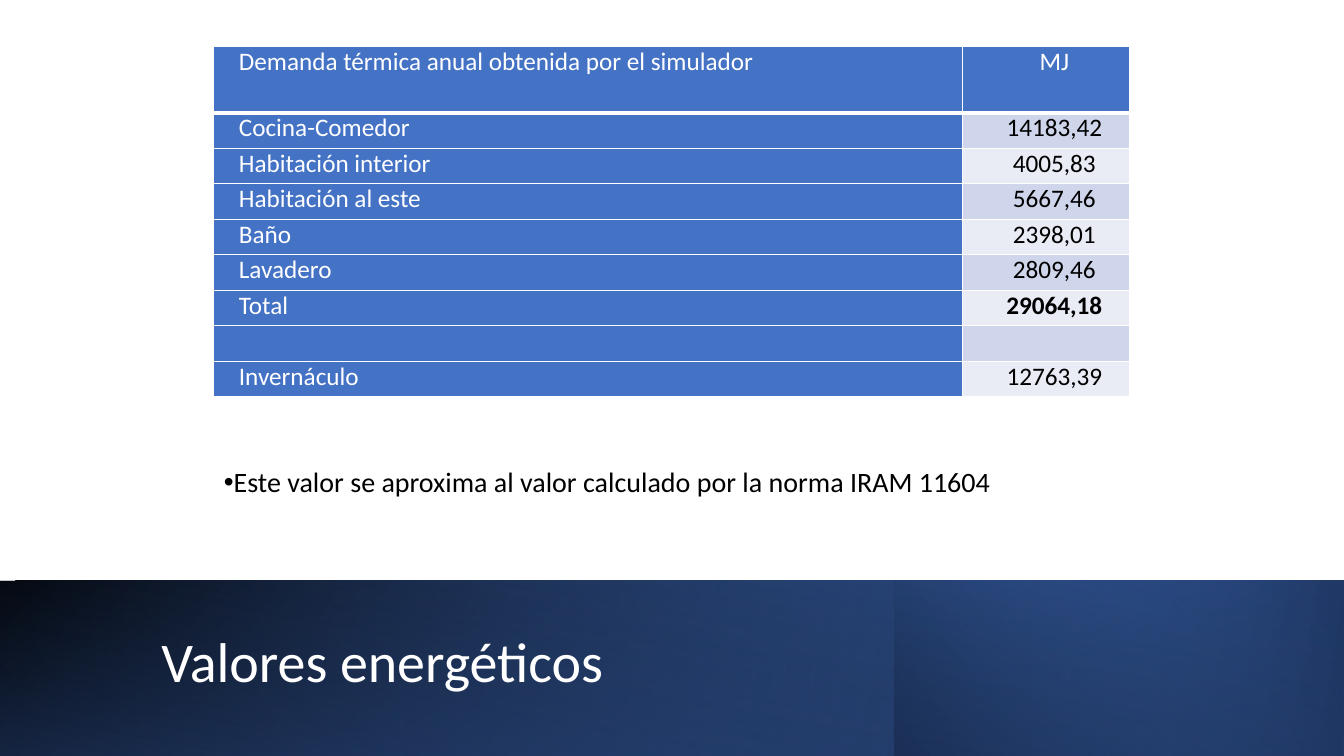
from lxml.etree import SubElement
from pptx import Presentation
from pptx.dml.color import RGBColor
from pptx.enum.shapes import MSO_SHAPE as Shape
from pptx.enum.text import MSO_ANCHOR as Anchor, MSO_AUTO_SIZE as AutoSize, PP_ALIGN as Align
from pptx.oxml.ns import qn
from pptx.util import Pt

TITLE = "Valores energéticos"
NOTE = "Este valor se aproxima al valor calculado por la norma IRAM 11604"
DEMAND = [
    ("Demanda térmica anual obtenida por el simulador", "MJ"),
    ("Cocina-Comedor", "14183,42"),
    ("Habitación interior", "4005,83"),
    ("Habitación al este", "5667,46"),
    ("Baño", "2398,01"),
    ("Lavadero", "2809,46"),
    ("Total", "29064,18"),
    ("", ""),
    ("Invernáculo", "12763,39"),
]
COLORS = {
    "white": "FFFFFF", "black": "000000", "blue": "4472C4",
    "navy": "203864", "band_dark": "CFD5EA", "band_light": "E9EBF5",
}
FONT = "Calibri"
SLIDE_WIDTH, SLIDE_HEIGHT = 960, 540
BAND_TOP, BAND_HEIGHT = 414.72, 125.28
BANDS = [
    ((0, BAND_TOP, SLIDE_WIDTH, BAND_HEIGHT), 0, 140, [(0, "black", 100), (1, "blue", 100)]),
    ((0, BAND_TOP, SLIDE_WIDTH, BAND_HEIGHT), 0, 170, [(0, "blue", 0), (1, "navy", 100)]),
    ((638.64, BAND_TOP, 321.36, BAND_HEIGHT), 0, 220, [(0, "navy", 100), (1, "blue", 0)]),
    ((-0.5, BAND_TOP, SLIDE_WIDTH, 125.8), 180, 280, [(0, "black", 0), (0.99, "navy", 55)]),
]
TITLE_BOX = (108, 434.16, 779.04, 81.36)
NOTE_BOX = (152.64, 301.68, 655.92, 87.84)
TABLE_LEFT, TABLE_TOP = 152.64, 33.12
COLUMN_WIDTHS = (534.96, 119.52)
HEADER_HEIGHT, ROW_HEIGHT = 47.4, 25.38
CELL_INSET, CELL_INDENT = 6.5, 11.5


def rgb(name):
    return RGBColor.from_string(COLORS[name])


def points(values):
    return [Pt(value) for value in values]


def add_span(para, text, size, color, bold=False):
    span = para.add_run()
    span.text = text
    span.font.name = FONT
    span.font.size = Pt(size)
    span.font.bold = bold
    span.font.color.rgb = rgb(color)


def add_band(slide, place, rotation, angle, stops):
    band = slide.shapes.add_shape(Shape.RECTANGLE, *points(place))
    band.shadow.inherit = False
    band.line.fill.background()
    band.rotation = rotation
    if not rotation:
        band.element.spPr.find(qn("a:xfrm")).set("flipH", "1")
    band.fill.gradient()
    band.fill.gradient_angle = 360 - angle
    for stop, (position, color, _) in zip(band.fill.gradient_stops, stops):
        stop.position = position
        stop.color.rgb = rgb(color)
    tints = band.element.spPr.iter(qn("a:srgbClr"))
    for tint, (_, _, opacity) in zip(tints, stops):
        if opacity < 100:
            SubElement(tint, qn("a:alpha")).set("val", str(opacity * 1000))
    slide.shapes.title.element.addprevious(band.element)


def fill_placeholder(box, place, text, size, color):
    box.left, box.top, box.width, box.height = points(place)
    frame = box.text_frame
    frame.word_wrap = True
    frame.auto_size = AutoSize.NONE
    frame.vertical_anchor = Anchor.MIDDLE
    para = frame.paragraphs[0]
    para.alignment = Align.LEFT
    para.line_spacing = 0.9
    para.space_before = Pt(0)
    add_span(para, text, size, color)
    return para


def add_bullet(para):
    props = para._p.get_or_add_pPr()
    props.set("marL", "0")
    props.set("indent", str(-Pt(18)))
    SubElement(props, qn("a:buChar")).set("char", "•")


def add_borders(cell, bottom):
    props = cell._tc.get_or_add_tcPr()
    for side, width in (("lnL", 1), ("lnR", 1), ("lnT", 1), ("lnB", bottom)):
        line = SubElement(props, qn(f"a:{side}"), w=str(Pt(width)))
        solid = SubElement(line, qn("a:solidFill"))
        SubElement(solid, qn("a:srgbClr")).set("val", COLORS["white"])


def fill_cell(cell, row, column, text):
    add_borders(cell, 1 if row else 3)
    cell.margin_left = cell.margin_right = Pt(CELL_INSET)
    cell.margin_top = cell.margin_bottom = 0
    colored = row == 0 or column == 0
    cell.fill.solid()
    cell.fill.fore_color.rgb = rgb("blue" if colored else "band_dark" if row % 2 else "band_light")
    if text:
        para = cell.text_frame.paragraphs[0]
        para.alignment = Align.CENTER if column else Align.JUSTIFY
        para._p.get_or_add_pPr().set("marL", str(Pt(CELL_INDENT)))
        bold = column == 1 and DEMAND[row][0] == "Total"
        add_span(para, text, 18, "white" if colored else "black", bold)


def add_demand_table(slide):
    heights = [HEADER_HEIGHT] + [ROW_HEIGHT] * (len(DEMAND) - 1)
    place = (TABLE_LEFT, TABLE_TOP, sum(COLUMN_WIDTHS), sum(heights))
    table = slide.shapes.add_table(len(DEMAND), len(COLUMN_WIDTHS), *points(place)).table
    for column, width in zip(table.columns, COLUMN_WIDTHS):
        column.width = Pt(width)
    for row, (height, texts) in enumerate(zip(heights, DEMAND)):
        table.rows[row].height = Pt(height)
        for column, text in enumerate(texts):
            fill_cell(table.cell(row, column), row, column, text)


def main():
    deck = Presentation()
    deck.slide_width, deck.slide_height = Pt(SLIDE_WIDTH), Pt(SLIDE_HEIGHT)
    page = deck.slides.add_slide(deck.slide_layouts[1])
    for band in BANDS:
        add_band(page, *band)
    fill_placeholder(page.shapes.title, TITLE_BOX, TITLE, 40, "white")
    note = fill_placeholder(page.placeholders[1], NOTE_BOX, NOTE, 20, "black")
    note.space_after = Pt(6)
    add_bullet(note)
    add_demand_table(page)
    deck.save("out.pptx")


if __name__ == "__main__":
    main()
